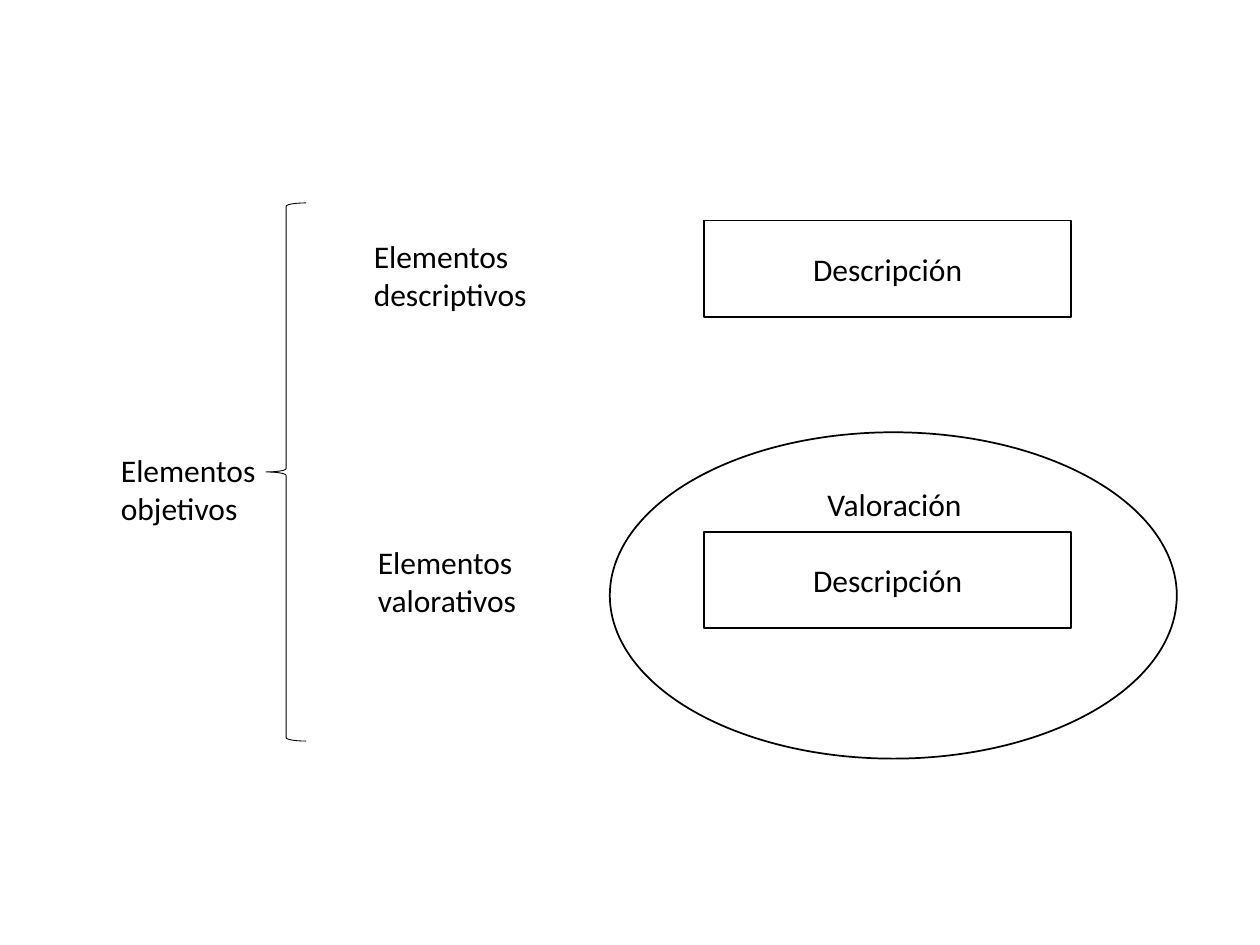
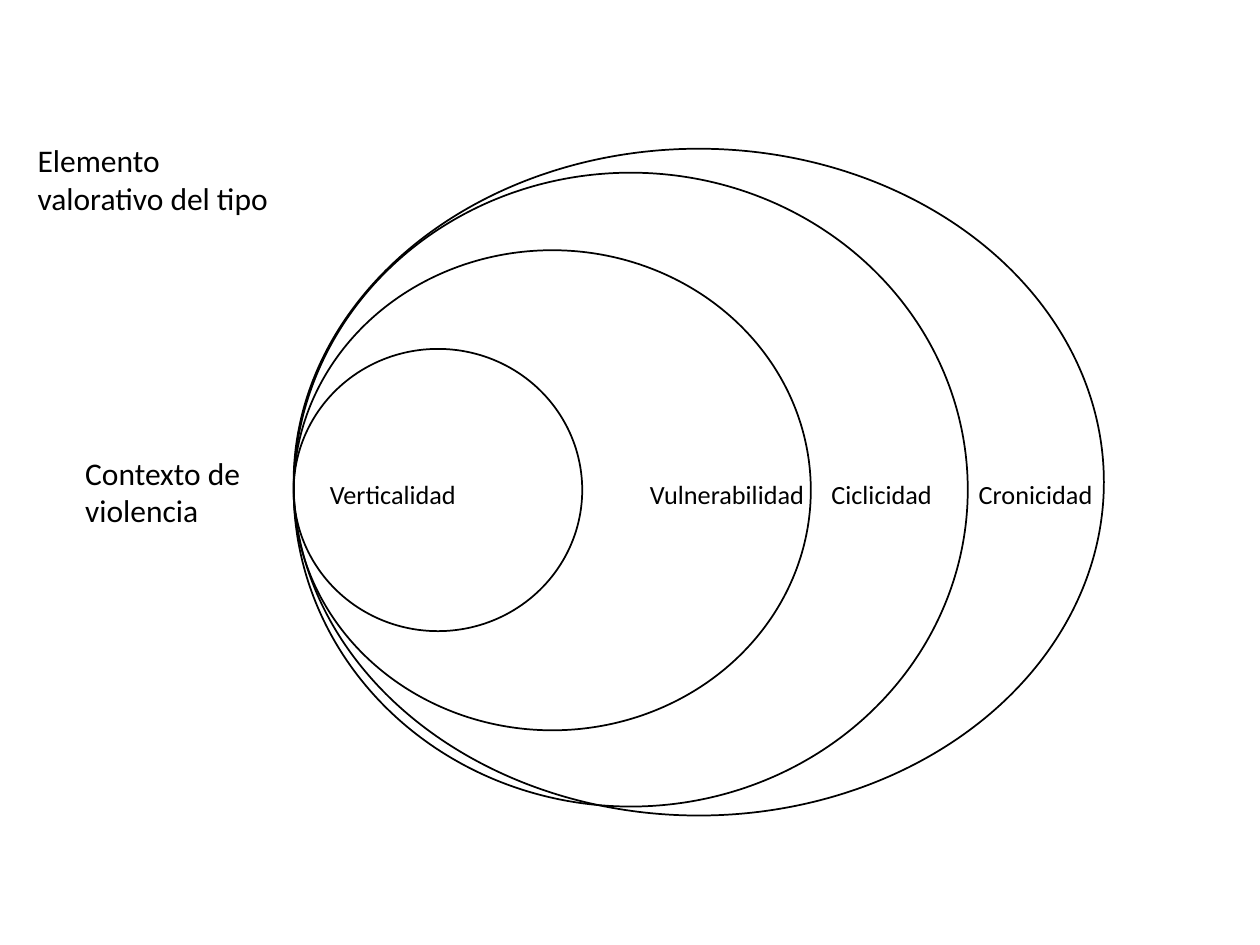
import dataclasses

import pptx
import pptx.dml.color
import pptx.enum.shapes
import pptx.enum.text
import pptx.presentation
import pptx.shapes.autoshape
import pptx.slide
import pptx.util

Pt = pptx.util.Pt
Preset = pptx.enum.shapes.MSO_SHAPE

BLACK = "000000"
WHITE = "FFFFFF"
FONT = "Calibri"
BODY_SIZE = 18
RING_LABEL_SIZE = 15
RING_LEFT = 167.8


@dataclasses.dataclass(frozen=True)
class Box:
    left: float
    top: float
    width: float
    height: float

    def lengths(self) -> tuple[pptx.util.Length, ...]:
        return Pt(self.left), Pt(self.top), Pt(self.width), Pt(self.height)


@dataclasses.dataclass(frozen=True)
class Outline:
    preset: Preset
    box: Box
    text: str = ""
    fill: str | None = None
    line_width: float = 1


@dataclasses.dataclass(frozen=True)
class Label:
    text: str
    box: Box
    size: float = BODY_SIZE


DESCRIPTION_OUTLINES = [
    Outline(Preset.LEFT_BRACE, Box(152, 116, 23, 307.5), line_width=0.5),
    Outline(Preset.RECTANGLE, Box(402.5, 126, 209.5, 55), "Descripción", WHITE),
    Outline(Preset.RECTANGLE, Box(402.5, 304, 209.5, 55), "Descripción"),
    Outline(Preset.OVAL, Box(348.5, 247, 324, 186.5)),
]
DESCRIPTION_LABELS = [
    Label("Elementos descriptivos", Box(206.5, 131.8, 110, 51)),
    Label("Elementos objetivos", Box(62, 254.2, 110, 51)),
    Label("Elementos valorativos", Box(208.8, 306.7, 110, 51)),
    Label("Valoración", Box(465.8, 273.6, 153.4, 29)),
]

RINGS = [
    Outline(Preset.OVAL, Box(RING_LEFT, top, width, height))
    for top, width, height in (
        (199.4, 164.9, 161.3),
        (143, 295.5, 274.3),
        (98.7, 385.2, 362.2),
        (85, 463, 381),
    )
]
RING_LABELS = [
    Label(text, Box(left, 269.6, 150.5, 25), RING_LABEL_SIZE)
    for text, left in (
        ("Verticalidad", 181.4),
        ("Vulnerabilidad", 364.3),
        ("Ciclicidad", 468),
        ("Cronicidad", 552.2),
    )
]
CONTEXT_LABELS = [
    Label("Elemento valorativo del tipo", Box(14.4, 77, 148.3, 51)),
    Label("Contexto de violencia", Box(41.6, 255.6, 148.3, 51)),
]


def color(value: str) -> pptx.dml.color.RGBColor:
    return pptx.dml.color.RGBColor.from_string(value)


def write_text(shape: pptx.shapes.autoshape.Shape, text: str, size: float) -> None:
    shape.text_frame.word_wrap = True
    shape.text_frame.text = text
    font = shape.text_frame.paragraphs[0].runs[0].font
    font.name = FONT
    font.size = Pt(size)
    font.color.rgb = color(BLACK)


def draw_outline(slide: pptx.slide.Slide, outline: Outline) -> None:
    shape = slide.shapes.add_shape(outline.preset, *outline.box.lengths())
    shape.shadow.inherit = False
    if outline.fill:
        shape.fill.solid()
        shape.fill.fore_color.rgb = color(outline.fill)
    else:
        shape.fill.background()
    shape.line.color.rgb = color(BLACK)
    shape.line.width = Pt(outline.line_width)
    if outline.text:
        write_text(shape, outline.text, BODY_SIZE)
        shape.text_frame.vertical_anchor = pptx.enum.text.MSO_ANCHOR.MIDDLE
        shape.text_frame.paragraphs[0].alignment = pptx.enum.text.PP_ALIGN.CENTER


def draw_label(slide: pptx.slide.Slide, label: Label) -> None:
    shape = slide.shapes.add_textbox(*label.box.lengths())
    write_text(shape, label.text, label.size)
    shape.text_frame.auto_size = pptx.enum.text.MSO_AUTO_SIZE.SHAPE_TO_FIT_TEXT


def add_diagram(
    presentation: pptx.presentation.Presentation,
    outlines: list[Outline],
    labels: list[Label],
) -> None:
    slide = presentation.slides.add_slide(presentation.slide_layouts[6])
    for outline in outlines:
        draw_outline(slide, outline)
    for label in labels:
        draw_label(slide, label)


def main() -> None:
    presentation = pptx.Presentation()
    presentation.slide_width = Pt(720)
    presentation.slide_height = Pt(540)
    add_diagram(presentation, DESCRIPTION_OUTLINES, DESCRIPTION_LABELS)
    add_diagram(presentation, RINGS, CONTEXT_LABELS + RING_LABELS)
    presentation.save("out.pptx")


if __name__ == "__main__":
    main()
